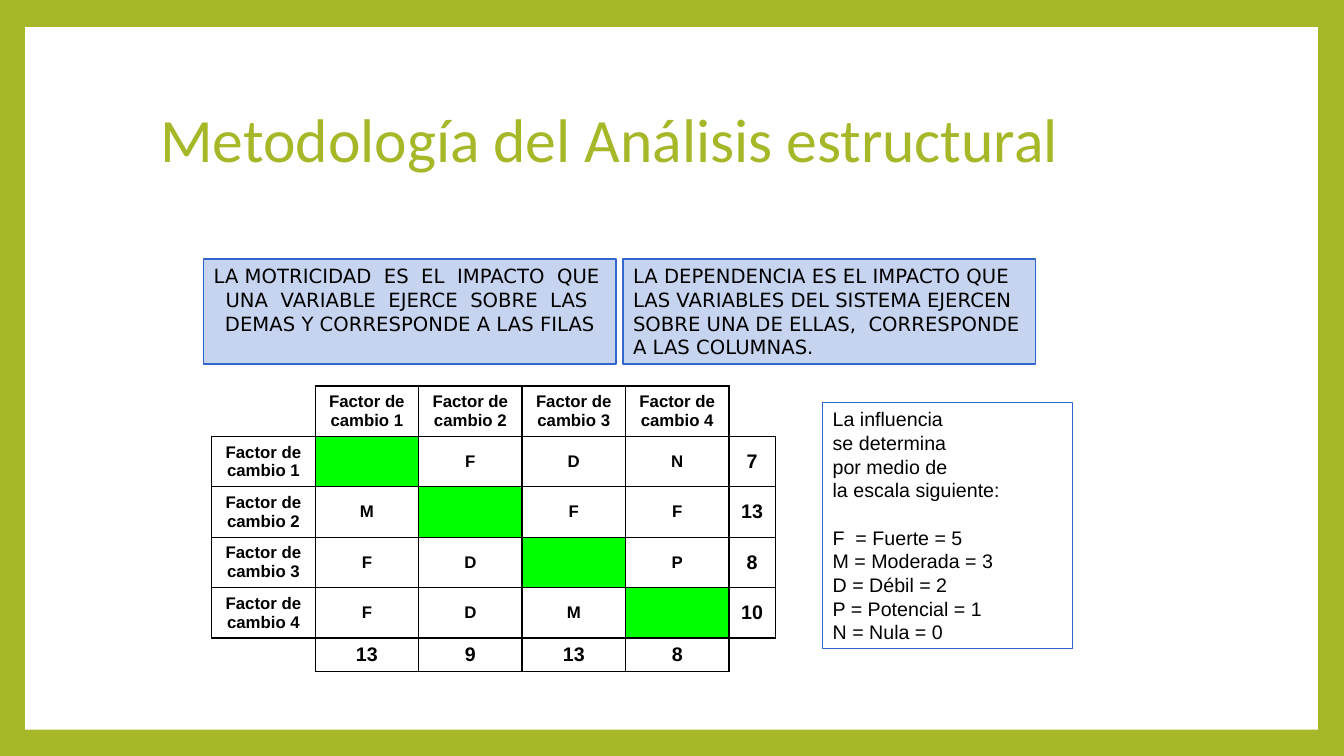
import pptx
import pptx.util
import pptx.dml.color
import pptx.enum.shapes
import pptx.enum.text
import pptx.oxml.ns
from dataclasses import dataclass
from lxml import etree

Inches, Pt = pptx.util.Inches, pptx.util.Pt
ALIGN = pptx.enum.text.PP_ALIGN
ANCHOR = pptx.enum.text.MSO_ANCHOR
qn = pptx.oxml.ns.qn


@dataclass(frozen=True)
class Theme:
    accent: str = "A6B727"
    paper: str = "FFFFFF"
    ink: str = "000000"
    blue: str = "3366CC"
    diagonal: str = "00FF00"
    title_font: str = "Calibri"
    note_font: str = "DejaVu Sans"
    body_font: str = "Arial"
    title_size: float = 44
    body_size: float = 14
    cell_size: float = 12
    body_leading: float = 16.9


T = Theme()

FACTORS = [f"Factor de cambio {n}" for n in range(1, 5)]
INFLUENCES = [["", "F", "D", "N"],
              ["M", "", "F", "F"],
              ["F", "D", "", "P"],
              ["F", "D", "M", ""]]
DRIVING = ["7", "13", "8", "10"]
DEPENDENCE = ["13", "9", "13", "8"]
MOTRICITY_NOTE = ("LA MOTRICIDAD  ES  EL  IMPACTO  QUE  UNA  VARIABLE  EJERCE  "
                  "SOBRE  LAS  DEMAS Y CORRESPONDE A LAS FILAS")
DEPENDENCE_NOTE = ("LA DEPENDENCIA ES EL IMPACTO QUE LAS VARIABLES DEL SISTEMA EJERCEN "
                   "SOBRE UNA DE ELLAS,  CORRESPONDE A LAS COLUMNAS.")
SCALE_INTRO = ["La influencia", "se determina", "por medio de", "la escala siguiente:"]
SCALE = ["F  = Fuerte = 5", "M = Moderada = 3", "D = Débil = 2",
         "P = Potencial = 1", "N = Nula = 0"]


def rgb(color):
    return pptx.dml.color.RGBColor.from_string(color)


def write(p, text, font=T.body_font, size=T.body_size, color=T.ink, bold=False,
          align=ALIGN.LEFT, spacing=None, before=0):
    """Fill one paragraph with formatted text."""
    p.alignment = align
    p.space_before = Pt(before)
    if spacing:
        p.line_spacing = spacing
    r = p.add_run()
    r.text = text
    r.font.name, r.font.size, r.font.bold = font, Pt(size), bold
    r.font.color.rgb = rgb(color)


def add_rect(slide, box, fill=None, alpha=None, line=None, width=1):
    sp = slide.shapes.add_shape(pptx.enum.shapes.MSO_SHAPE.RECTANGLE, *map(Inches, box))
    sp.shadow.inherit = False
    if fill:
        sp.fill.solid()
        sp.fill.fore_color.rgb = rgb(fill)
    else:
        sp.fill.background()
    if alpha:
        color = sp.fill._xPr.find(qn("a:solidFill"))[0]
        etree.SubElement(color, qn("a:alpha"), val=str(alpha * 1000))
    if line:
        sp.line.color.rgb = rgb(line)
        sp.line.width = Pt(width)
    else:
        sp.line.fill.background()
    tf = sp.text_frame
    tf.word_wrap = True
    tf.vertical_anchor = ANCHOR.TOP
    return sp


def add_title(slide, box):
    tf = slide.shapes.add_textbox(*map(Inches, box)).text_frame
    tf.word_wrap = True
    tf.vertical_anchor = ANCHOR.MIDDLE
    write(tf.paragraphs[0], "Metodología del Análisis estructural", font=T.title_font,
          size=T.title_size, color=T.accent, spacing=0.9)


def add_notes(slide, box, gap=0.07):
    """Two tinted definitions side by side."""
    x, y, w, h = box
    note_w = (w - gap) / 2
    notes = [(MOTRICITY_NOTE, ALIGN.CENTER), (DEPENDENCE_NOTE, ALIGN.LEFT)]
    for i, (text, align) in enumerate(notes):
        sp = add_rect(slide, (x + i * (note_w + gap), y, note_w, h),
                      fill=T.blue, alpha=28, line=T.blue)
        write(sp.text_frame.paragraphs[0], text, font=T.note_font, align=align,
              spacing=Pt(T.body_leading))


def add_scale(slide, box):
    """Outlined key to the influence letters."""
    tf = add_rect(slide, box, line=T.blue, width=0.75).text_frame
    for i, text in enumerate(SCALE_INTRO + SCALE):
        p = tf.add_paragraph() if i else tf.paragraphs[0]
        write(p, text, spacing=Pt(T.body_leading),
              before=T.body_leading if i == len(SCALE_INTRO) else 0)


def set_borders(cell, hidden):
    tcPr = cell._tc.get_or_add_tcPr()
    for side in "LRTB":
        ln = etree.SubElement(tcPr, qn(f"a:ln{side}"), w=str(Pt(1)))
        if side in hidden:
            etree.SubElement(ln, qn("a:noFill"))
        else:
            fill = etree.SubElement(ln, qn("a:solidFill"))
            etree.SubElement(fill, qn("a:srgbClr"), val=T.ink)


def add_matrix(slide, box, total_w=0.46, total_h=0.33):
    """Influence matrix with row and column totals."""
    rows = [["", *FACTORS, ""]]
    rows += [[f, *vals, total] for f, vals, total in zip(FACTORS, INFLUENCES, DRIVING)]
    rows.append(["", *DEPENDENCE, ""])
    last = len(rows) - 1
    w, h = box[2:]
    table = slide.shapes.add_table(last + 1, last + 1, *map(Inches, box)).table
    table.first_row = table.horz_banding = False
    for i in range(last + 1):
        table.columns[i].width = Inches(total_w if i == last else (w - total_w) / last)
        table.rows[i].height = Inches(total_h if i == last else (h - total_h) / last)

    for r, row in enumerate(rows):
        for c, text in enumerate(row):
            cell = table.cell(r, c)
            cell.margin_top = cell.margin_bottom = 0
            cell.vertical_anchor = ANCHOR.MIDDLE
            # Corner cells are open on their outer sides
            corner = r in (0, last) and c in (0, last)
            set_borders(cell, ("L" if c == 0 else "R") + ("T" if r == 0 else "B")
                        if corner else "")
            cell.fill.solid()
            on_diagonal = r == c and not corner
            cell.fill.fore_color.rgb = rgb(T.diagonal if on_diagonal else T.paper)
            if text:
                write(cell.text_frame.paragraphs[0], text, bold=True, align=ALIGN.CENTER,
                      size=T.body_size if last in (r, c) else T.cell_size)


def main():
    prs = pptx.Presentation()
    prs.slide_width, prs.slide_height = Inches(13.33), Inches(7.5)
    slide = prs.slides.add_slide(prs.slide_layouts[6])

    # Green frame around a white page
    slide.background.fill.solid()
    slide.background.fill.fore_color.rgb = rgb(T.accent)
    add_rect(slide, (0.25, 0.27, 12.82, 6.97), fill=T.paper)

    add_notes(slide, (2.02, 2.57, 8.25, 1.04))
    add_scale(slide, (8.16, 3.99, 2.48, 2.44))
    add_matrix(slide, (2.1, 3.83, 5.59, 2.83))
    add_title(slide, (1.49, 0.67, 10.69, 1.48))
    prs.save("out.pptx")


if __name__ == "__main__":
    main()
